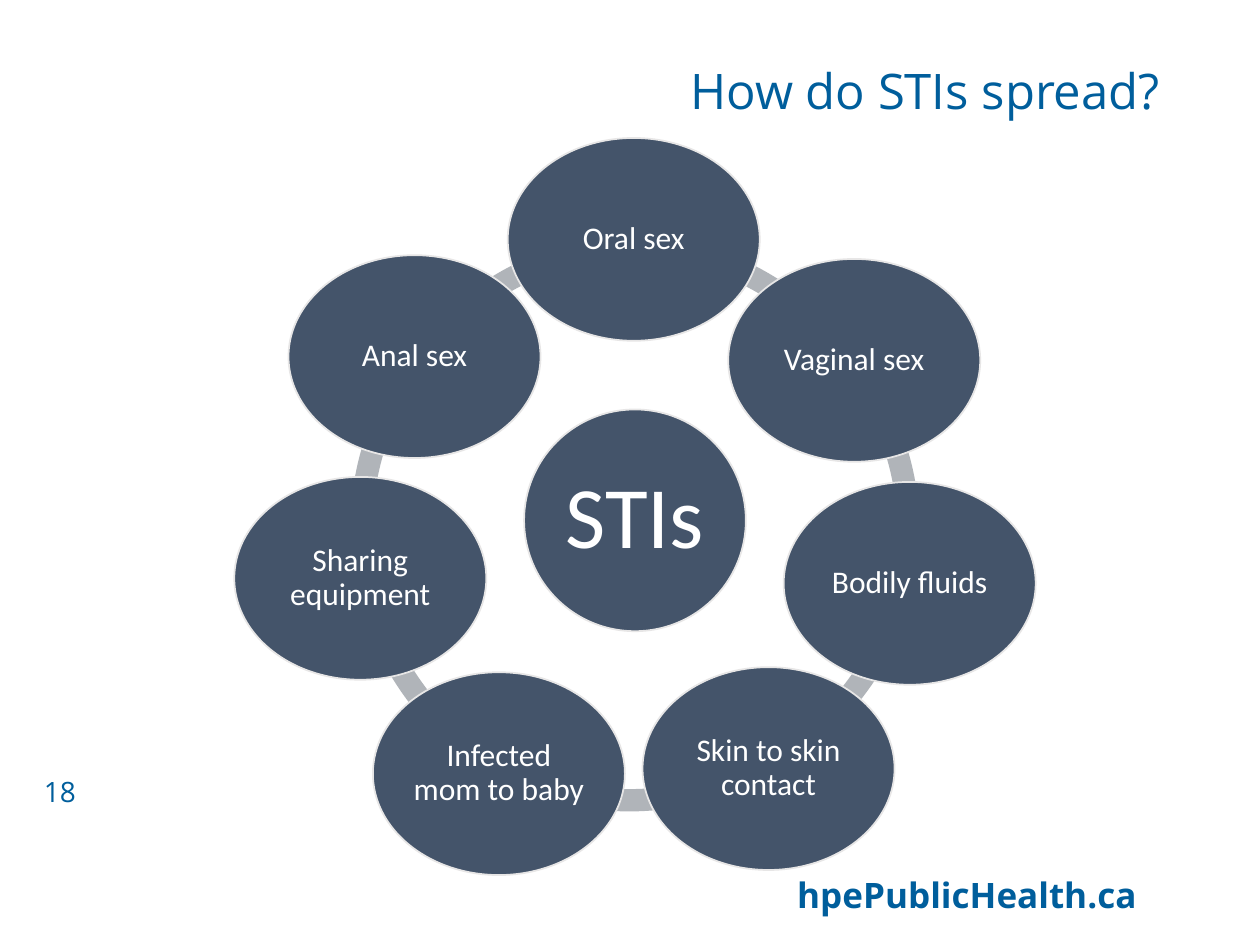
from dataclasses import dataclass

from pptx import Presentation
from pptx.dml.color import RGBColor
from pptx.enum.shapes import MSO_SHAPE as Shape
from pptx.enum.text import MSO_ANCHOR as Anchor, MSO_AUTO_SIZE as AutoSize, PP_ALIGN as Align
from pptx.util import Inches, Pt


@dataclass(frozen=True)
class Theme:
    blue: RGBColor = RGBColor.from_string("005E9C")
    slate: RGBColor = RGBColor.from_string("44546A")
    ring: RGBColor = RGBColor.from_string("B0B4B9")
    outline: RGBColor = RGBColor.from_string("E7E6E6")
    white: RGBColor = RGBColor.from_string("FFFFFF")
    brand_font: str = "Open Sans"
    diagram_font: str = "Calibri"
    title_size: int = 28
    footer_size: int = 20
    number_size: int = 16
    hub_size: int = 50
    route_size: int = 18


THEME = Theme()

# Each route of infection with the centre of its ellipse in the diagram box
ROUTES = [
    ("Oral sex", 3.17, 0.8),
    ("Vaginal sex", 4.92, 1.76),
    ("Bodily fluids", 5.36, 3.53),
    ("Skin to skin contact", 4.24, 5.0),
    ("Infected mom to baby", 2.1, 5.04),
    ("Sharing equipment", 1.0, 3.49),
    ("Anal sex", 1.43, 1.73),
]
ROUTE_SIZE = (2, 1.61)
HUB_CENTRE, HUB_SIZE = (3.18, 3.03), (1.76, 1.76)

# Ring pieces: left and top in the diagram box, start and end in degrees
ARCS = [
    (0.96, 0.76, 215.8, 268.33),
    (0.92, 0.82, 169.69, 217.74),
    (0.92, 0.82, 119.27, 169.81),
    (0.86, 0.79, 60.32, 117.66),
    (0.91, 0.77, 12.64, 61.69),
    (0.89, 0.85, 322.26, 10.31),
    (0.82, 0.76, 272, 325.39),
]
ARC_SIZE, ARC_THICKNESS = 4.55, 0.039
ADJUSTMENT_PER_DEGREE = 0.6


def style(paragraph, font_name, size, color, bold=False):
    font = paragraph.font
    font.name, font.size, font.bold = font_name, Pt(size), bold
    font.color.rgb = color


def add_title(slide, text, left, top, width, height):
    title = slide.shapes.title
    title.left, title.top, title.width, title.height = map(Inches, (left, top, width, height))
    frame = title.text_frame
    frame.text = text
    frame.word_wrap = True
    frame.auto_size = AutoSize.NONE
    frame.vertical_anchor = Anchor.TOP
    heading = frame.paragraphs[0]
    heading.alignment = Align.LEFT
    heading.line_spacing = 0.9
    style(heading, THEME.brand_font, THEME.title_size, THEME.blue)


def add_label(slide, text, size, left, top, width, height,
              align=Align.LEFT, anchor=Anchor.TOP, bold=False):
    frame = slide.shapes.add_textbox(*map(Inches, (left, top, width, height))).text_frame
    frame.word_wrap = True
    frame.vertical_anchor = anchor
    frame.text = text
    label = frame.paragraphs[0]
    label.alignment = align
    style(label, THEME.brand_font, size, THEME.blue, bold)


def add_arc(shapes, left, top, start, end):
    arc = shapes.add_shape(Shape.BLOCK_ARC, *map(Inches, (left, top, ARC_SIZE, ARC_SIZE)))
    arc.adjustments[0] = start * ADJUSTMENT_PER_DEGREE
    arc.adjustments[1] = end * ADJUSTMENT_PER_DEGREE
    arc.adjustments[2] = ARC_THICKNESS
    arc.shadow.inherit = False
    arc.fill.solid()
    arc.fill.fore_color.rgb = THEME.ring
    arc.line.fill.background()


def add_node(shapes, text, centre, size, font_size, inset):
    (x, y), (width, height) = centre, size
    node = shapes.add_shape(
        Shape.OVAL, *map(Inches, (x - width / 2, y - height / 2, width, height)))
    node.shadow.inherit = False
    node.fill.solid()
    node.fill.fore_color.rgb = THEME.slate
    node.line.color.rgb = THEME.outline
    node.line.width = Pt(1)
    frame = node.text_frame
    frame.word_wrap = True
    frame.vertical_anchor = Anchor.MIDDLE
    frame.margin_left = frame.margin_right = Inches(inset)
    frame.margin_top = frame.margin_bottom = Inches(inset)
    frame.text = text
    caption = frame.paragraphs[0]
    caption.alignment = Align.CENTER
    caption.line_spacing = 0.9
    style(caption, THEME.diagram_font, font_size, THEME.white)


def add_radial_diagram(slide, left, top):
    shapes = slide.shapes.add_group_shape().shapes
    # Ring behind the nodes
    for x, y, start, end in ARCS:
        add_arc(shapes, left + x, top + y, start, end)
    # Hub, then the routes clockwise from the top
    hub_x, hub_y = HUB_CENTRE
    add_node(shapes, "STIs", (left + hub_x, top + hub_y), HUB_SIZE, THEME.hub_size, 0.07)
    for route, x, y in ROUTES:
        add_node(shapes, route, (left + x, top + y), ROUTE_SIZE, THEME.route_size, 0.03)


def main():
    deck = Presentation()
    deck.slide_width, deck.slide_height = Inches(10), Inches(7.5)
    slide = deck.slides.add_slide(deck.slide_layouts[5])

    # Footer and slide number
    add_label(slide, "hpePublicHealth.ca", THEME.footer_size, 5.89, 6.9, 3.57, 0.4,
              Align.CENTER, Anchor.MIDDLE, bold=True)
    add_label(slide, "18", THEME.number_size, 0.25, 6.1, 2.25, 0.4)

    add_title(slide, "How do STIs spread?", 5.38, 0.48, 4.39, 0.54)
    add_radial_diagram(slide, 1.86, 1.1)
    deck.save("out.pptx")


if __name__ == "__main__":
    main()
